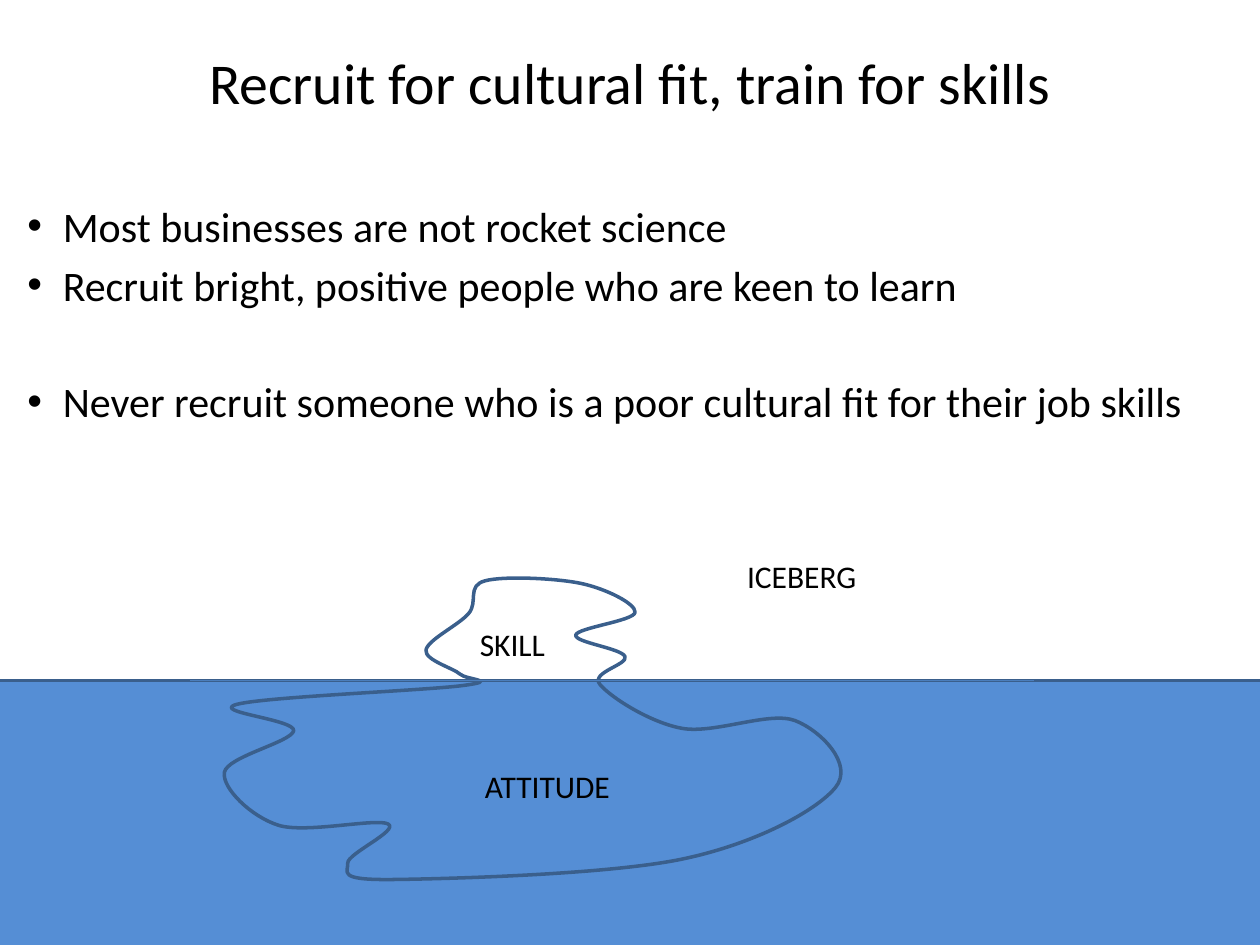
from dataclasses import dataclass

from lxml.etree import SubElement
from pptx import Presentation
from pptx.dml.color import RGBColor
from pptx.enum.shapes import MSO_CONNECTOR as Connector, MSO_SHAPE as Shape
from pptx.enum.text import MSO_ANCHOR as Anchor, MSO_AUTO_SIZE as AutoSize, PP_ALIGN as Align
from pptx.oxml.ns import qn
from pptx.util import Pt


@dataclass(frozen=True)
class Theme:
    font: str = "Calibri"
    text: RGBColor = RGBColor(0x00, 0x00, 0x00)
    sea: RGBColor = RGBColor(0x55, 0x8E, 0xD5)
    outline: RGBColor = RGBColor(0x3A, 0x5F, 0x8C)
    waterline: RGBColor = RGBColor(0x4B, 0x7E, 0xBC)
    title_size: float = 33
    body_size: float = 24
    label_size: float = 18


THEME = Theme()
SEA_LEVEL = 388.8

# Bullet text with the space before it
BULLETS = [
    ("Most businesses are not rocket science", 0),
    ("Recruit bright, positive people who are keen to learn", 4.8),
    ("Never recruit someone who is a poor cultural fit for their job skills", 38),
]

# Label text with left, top, width
LABELS = [
    ("SKILL", 267.1, 353.5, 52.6),
    ("ATTITUDE", 270, 434.9, 86.4),
    ("ICEBERG", 419.8, 314.6, 77.8),
]

# Points that the iceberg's smooth outline runs through
ICEBERG = [
    (265, 391.7), (262.8, 385.2), (243.4, 371.5), (267.8, 350.6), (277.2, 331.9),
    (331.9, 333.4), (362.9, 349.9), (329, 362.9), (357.1, 375.1), (342.7, 391),
    (389.5, 416.2), (454.3, 411.8), (477.4, 450), (389.5, 491), (223.9, 502.6),
    (198.7, 493.2), (221.8, 470.9), (159.1, 471.6), (128.2, 441.4), (167.8, 417.6),
    (135.4, 402.5),
]


def style(paragraph, size):
    paragraph.font.name = THEME.font
    paragraph.font.size = Pt(size)
    paragraph.font.color.rgb = THEME.text


def set_line(shape, color, width):
    shape.line.color.rgb = color
    shape.line.width = Pt(width)


def place(shape, left, top, width, height):
    shape.left, shape.top = Pt(left), Pt(top)
    shape.width, shape.height = Pt(width), Pt(height)


def add_title(page, text):
    title = page.shapes.title
    place(title, 36, 21.6, 648, 90)
    frame = title.text_frame
    frame.vertical_anchor = Anchor.MIDDLE
    frame.margin_bottom = Pt(44)
    frame.text = text
    para = frame.paragraphs[0]
    para.alignment = Align.CENTER
    style(para, THEME.title_size)


def add_bullets(page, items):
    box = page.shapes.add_textbox(Pt(8.6), Pt(110.9), Pt(678.2), Pt(356.4))
    frame = box.text_frame
    frame.word_wrap = True
    for index, (text, space) in enumerate(items):
        para = frame.add_paragraph() if index else frame.paragraphs[0]
        para.text = text
        para.space_before = Pt(space)
        props = para._p.get_or_add_pPr()
        props.set("marL", str(Pt(20.2)))
        props.set("indent", str(-Pt(20.2)))
        SubElement(props, qn("a:buFont"), typeface="Arial")
        SubElement(props, qn("a:buChar"), char="•")
        style(para, THEME.body_size)


def add_label(page, text, left, top, width):
    box = page.shapes.add_textbox(Pt(left), Pt(top), Pt(width), Pt(29))
    frame = box.text_frame
    frame.word_wrap = False
    frame.auto_size = AutoSize.SHAPE_TO_FIT_TEXT
    frame.text = text
    style(frame.paragraphs[0], THEME.label_size)


def add_sea(page):
    sea = page.shapes.add_shape(Shape.RECTANGLE, Pt(-2.9), Pt(SEA_LEVEL), Pt(730.8), Pt(226.8))
    sea.shadow.inherit = False
    sea.fill.solid()
    sea.fill.fore_color.rgb = THEME.sea
    set_line(sea, THEME.outline, 2)


def add_waterline(page):
    line = page.shapes.add_connector(
        Connector.STRAIGHT, Pt(108.7), Pt(SEA_LEVEL), Pt(591.1), Pt(SEA_LEVEL))
    set_line(line, THEME.waterline, 0.75)
    SubElement(line._element.spPr, qn("a:effectLst"))


def add_smooth_outline(page, knots):
    """Closed Catmull-Rom curve: each tangent is parallel to the neighbours' chord."""
    points = [(Pt(x), Pt(y)) for x, y in knots]
    count = len(points)
    builder = page.shapes.build_freeform(*points[0], scale=1.0)
    builder.add_line_segments(points[1:] + points[:1], close=True)
    outline = builder.convert_to_shape()
    outline.shadow.inherit = False
    outline.fill.background()
    set_line(outline, THEME.outline, 2)

    def control(index, sign):
        before, knot, after = (points[(index + step) % count] for step in (-1, 0, 1))
        return [k + sign * (a - b) / 6 for b, k, a in zip(before, knot, after)]

    # Turn each straight segment into a cubic curve
    for index, segment in enumerate(list(outline._element.iter(qn("a:lnTo")))):
        end = (index + 1) % count
        segment.tag = qn("a:cubicBezTo")
        segment.remove(segment[0])
        for x, y in (control(index, 1), control(end, -1), points[end]):
            SubElement(segment, qn("a:pt"),
                       x=str(round(x - outline.left)), y=str(round(y - outline.top)))


def main():
    deck = Presentation()
    deck.slide_width, deck.slide_height = Pt(720), Pt(540)
    page = deck.slides.add_slide(deck.slide_layouts[5])

    # Sea behind the text
    add_sea(page)

    # Title and bullets
    add_title(page, "Recruit for cultural fit, train for skills")
    add_bullets(page, BULLETS)

    # Iceberg and its labels
    add_smooth_outline(page, ICEBERG)
    add_waterline(page)
    for label in LABELS:
        add_label(page, *label)

    deck.save("out.pptx")


if __name__ == "__main__":
    main()
